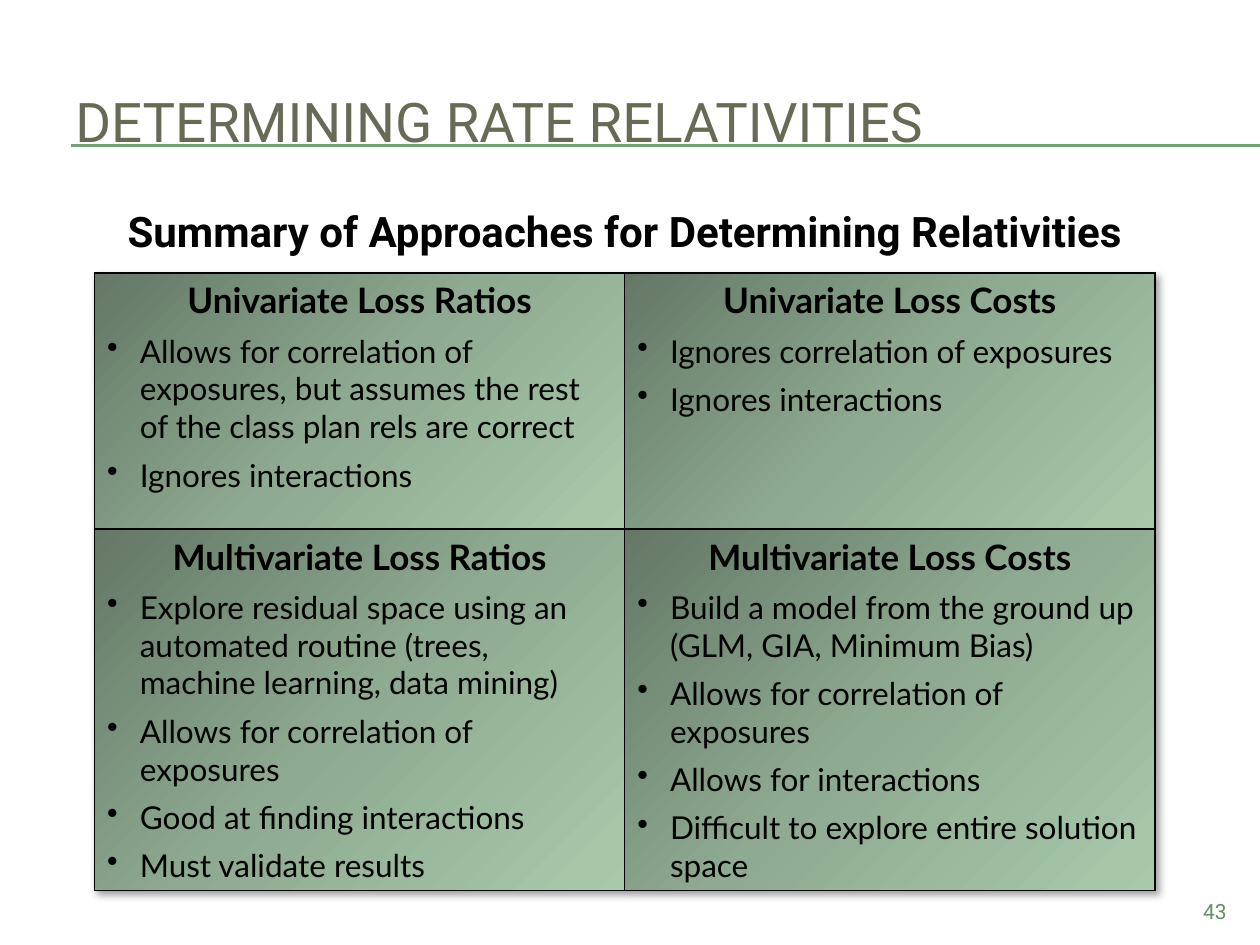
import pptx
import pptx.util
import pptx.dml.color
import pptx.enum.shapes
import pptx.enum.text
import pptx.oxml
import pptx.oxml.ns

RGBColor = pptx.dml.color.RGBColor
ALIGN = pptx.enum.text.PP_ALIGN
ANCHOR = pptx.enum.text.MSO_ANCHOR
GREEN = RGBColor(0x72, 0xA3, 0x76)
OLIVE = RGBColor(0x67, 0x6A, 0x55)
PAGE_GREEN = RGBColor(0x65, 0x90, 0x68)
BLACK = RGBColor(0, 0, 0)
STOPS = [(0, RGBColor(0x64, 0x78, 0x65)), (50, RGBColor(0x8E, 0xAA, 0x90)),
         (100, RGBColor(0xA8, 0xCA, 0xAB))]
NS = pptx.oxml.ns.nsdecls("a")

prs = pptx.Presentation()
prs.slide_width = pptx.util.Inches(10)
prs.slide_height = pptx.util.Inches(7.5)
s = prs.slides.add_slide(prs.slide_layouts[6])
COL = prs.slide_width / 120
ROW = prs.slide_height / 90


def grid(x, y, w, h):
    return round(x * COL), round(y * ROW), round(w * COL), round(h * ROW)


def write(p, text, fmt, align):
    p.alignment = align
    r = p.add_run()
    r.text = text
    color = fmt["color"]
    r.font.color.rgb = color
    for name, value in fmt.items():
        if name != "color":
            setattr(r.font, name, value)


for y in (13.8, 13.9):
    x1, y1, x2, y2 = grid(6.75, y, 120, y)
    sp = s.shapes.add_connector(pptx.enum.shapes.MSO_CONNECTOR.STRAIGHT, x1, y1, x2, y2)
    sp.line.color.rgb = GREEN
    sp.line.width = pptx.util.Pt(0.75)
    sp._element.spPr.append(pptx.oxml.parse_xml(f"<a:effectLst {NS}/>"))

labels = [
    ("DETERMINING RATE RELATIVITIES", (6, 6, 114, 11), ANCHOR.MIDDLE, ALIGN.LEFT,
     {"size": pptx.util.Pt(31.2), "name": "Roboto", "color": OLIVE}),
    ("43", (108, 85, 10, 3.25), ANCHOR.TOP, ALIGN.RIGHT,
     {"size": pptx.util.Pt(12), "name": "Roboto", "color": PAGE_GREEN}),
    ("Summary of Approaches for Determining Relativities", (7, 19, 105, 6), ANCHOR.TOP, ALIGN.CENTER,
     {"size": pptx.util.Pt(24), "name": "Roboto", "color": BLACK, "bold": True}),
]
for text, place, anchor, align, fmt in labels:
    tf = s.shapes.add_textbox(*grid(*place)).text_frame
    tf.word_wrap = True
    tf.vertical_anchor = anchor
    write(tf.paragraphs[0], text, fmt, align)

approaches = [
    [("Univariate Loss Ratios",
      ["Allows for correlation of exposures, but assumes the rest of the class plan rels are correct",
       "Ignores interactions"]),
     ("Univariate Loss Costs",
      ["Ignores correlation of exposures", "Ignores interactions"])],
    [("Multivariate Loss Ratios",
      ["Explore residual space using an automated routine (trees, machine learning, data mining)",
       "Allows for correlation of exposures", "Good at finding interactions", "Must validate results"]),
     ("Multivariate Loss Costs",
      ["Build a model from the ground up (GLM, GIA, Minimum Bias)",
       "Allows for correlation of exposures", "Allows for interactions",
       "Difficult to explore entire solution space"])],
]
HEAD = {"size": pptx.util.Pt(20), "name": "Lato", "color": BLACK, "bold": True}
BODY = {"size": pptx.util.Pt(18), "name": "Lato", "color": BLACK, "bold": False}
INDENT = pptx.util.Inches(0.26)
stops = "".join(f'<a:gs pos="{pos * 1000}"><a:srgbClr val="{c}"/></a:gs>' for pos, c in STOPS)
gradient = f'<a:gradFill {NS} rotWithShape="1"><a:gsLst>{stops}</a:gsLst><a:lin ang="2700000" scaled="0"/></a:gradFill>'

table = s.shapes.add_table(2, 2, *grid(9, 26, 101, 56.1)).table
table.first_row = table.horz_banding = False
table._tbl.tblPr.insert(0, pptx.oxml.parse_xml(
    f'<a:effectLst {NS}><a:outerShdw blurRad="50800" dist="38100" dir="2700000" algn="tl" rotWithShape="0">'
    '<a:srgbClr val="000000"><a:alpha val="40000"/></a:srgbClr></a:outerShdw></a:effectLst>'))
for row, height in zip(table.rows, (24.4, 31.7)):
    row.height = round(height * ROW)

for i, line in enumerate(approaches):
    for j, (heading, points) in enumerate(line):
        cell = table.cell(i, j)
        tf = cell.text_frame
        write(tf.paragraphs[0], heading, HEAD, ALIGN.CENTER)
        for point in points:
            p = tf.add_paragraph()
            pPr = p._p.get_or_add_pPr()
            pPr.set("marL", str(INDENT))
            pPr.set("indent", str(-INDENT))
            pPr.append(pptx.oxml.parse_xml(f'<a:buChar {NS} char="•"/>'))
            p.level = 1
            p.space_before = pptx.util.Pt(6)
            write(p, point, BODY, ALIGN.LEFT)
        tcPr = cell._tc.get_or_add_tcPr()
        for side in ("lnL", "lnR", "lnT", "lnB"):
            tcPr.append(pptx.oxml.parse_xml(
                f'<a:{side} {NS} w="12700"><a:solidFill><a:srgbClr val="{BLACK}"/></a:solidFill></a:{side}>'))
        tcPr.append(pptx.oxml.parse_xml(gradient))

prs.save("out.pptx")
